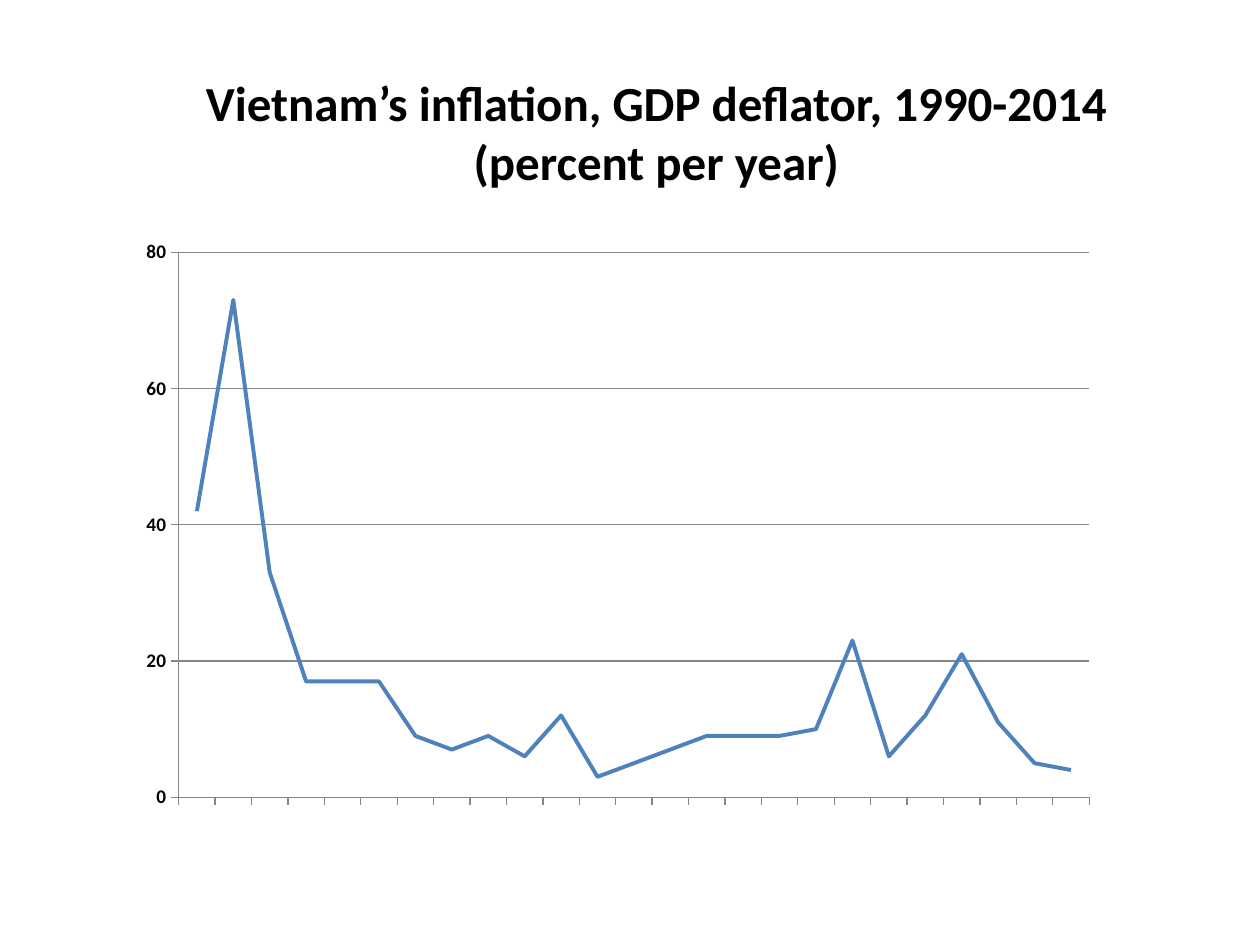
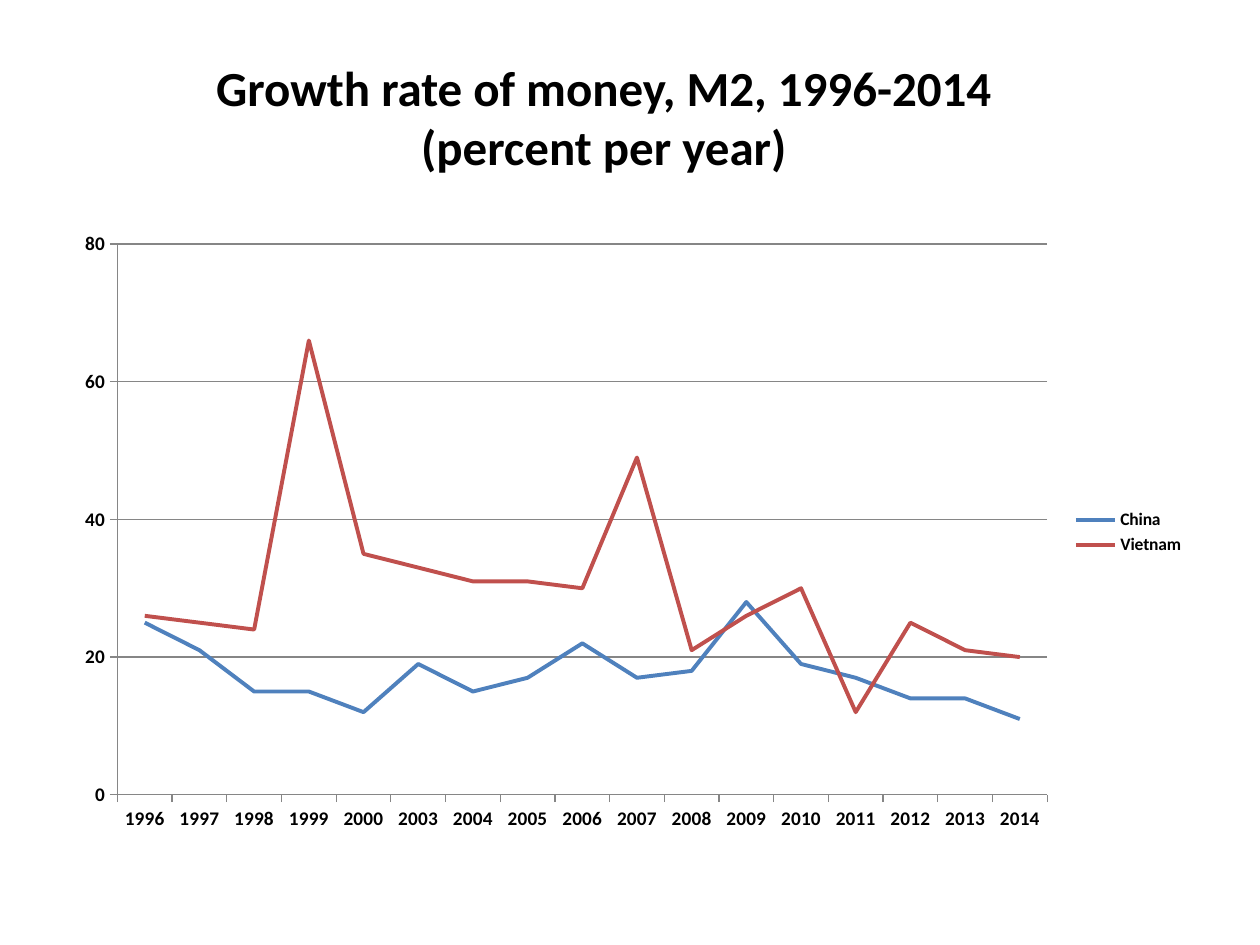
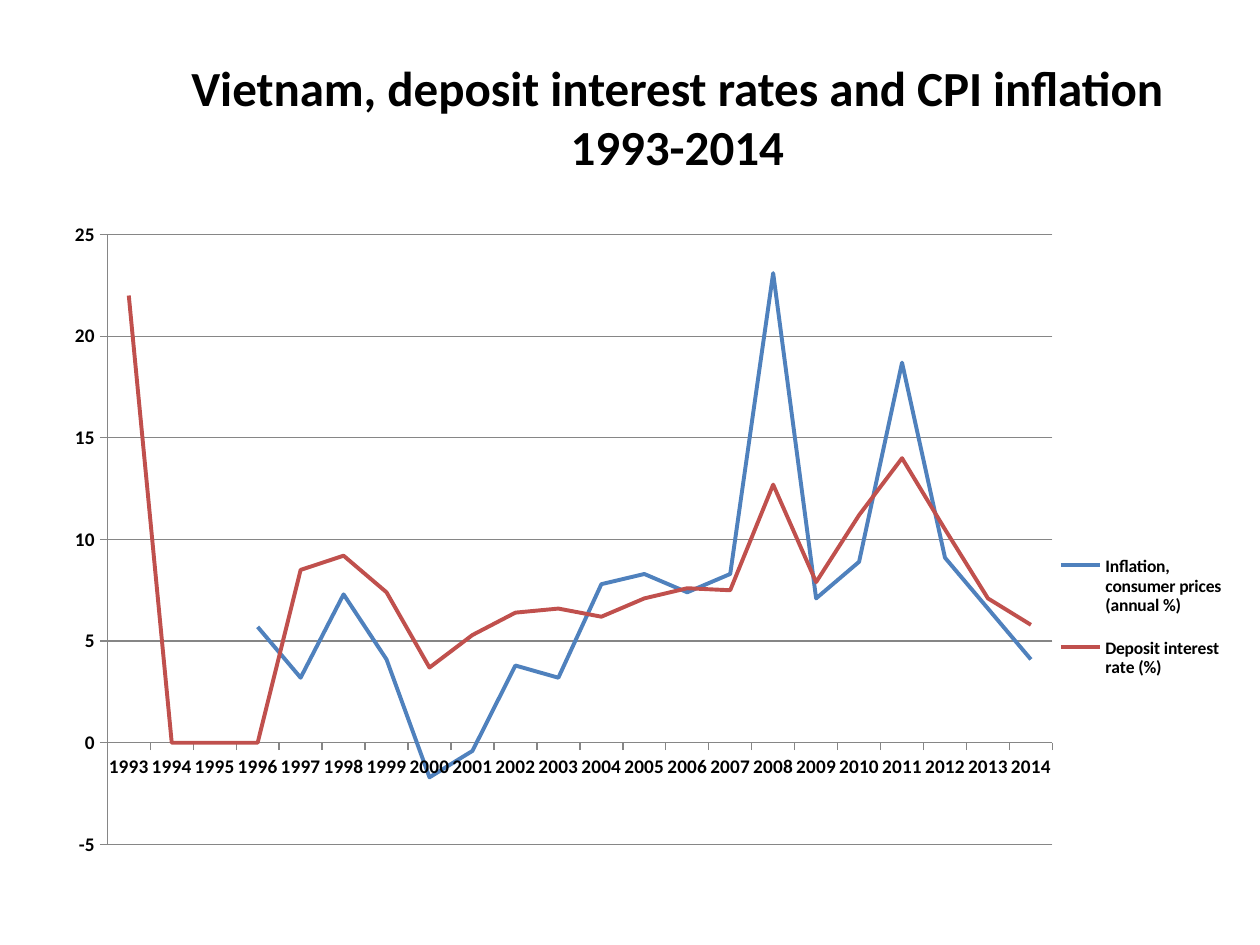
from dataclasses import dataclass

from lxml import etree
from pptx import Presentation
from pptx.chart.data import CategoryChartData
from pptx.dml.color import RGBColor
from pptx.enum.chart import XL_CHART_TYPE, XL_LEGEND_POSITION, XL_TICK_LABEL_POSITION, XL_TICK_MARK
from pptx.enum.text import MSO_ANCHOR, PP_ALIGN
from pptx.oxml.ns import qn
from pptx.util import Pt

LINE = XL_CHART_TYPE.LINE
RIGHT = XL_LEGEND_POSITION.RIGHT
NO_LABELS = XL_TICK_LABEL_POSITION.NONE
OUTSIDE = XL_TICK_MARK.OUTSIDE
NO_TICK = XL_TICK_MARK.NONE
MIDDLE = MSO_ANCHOR.MIDDLE
CENTER = PP_ALIGN.CENTER


@dataclass(frozen=True)
class Theme:
    font: str = "Calibri"
    text: RGBColor = RGBColor(0, 0, 0)
    axis: RGBColor = RGBColor(0x86, 0x86, 0x86)
    series: tuple = (RGBColor(0x4F, 0x81, 0xBD), RGBColor(0xC0, 0x50, 0x4D))
    title_size: Pt = Pt(28)
    axis_size: Pt = Pt(11)
    legend_size: Pt = Pt(10)
    axis_width: Pt = Pt(0.75)
    series_width: Pt = Pt(2.25)


theme = Theme()


def style_font(font, size):
    font.name = theme.font
    font.size = size
    font.bold = True
    font.color.rgb = theme.text


def set_layout(parent, index, box, inner=False):
    """Place a chart part at fractions (x, y, w, h) of the chart area."""
    for old in parent.findall(qn("c:layout")):
        parent.remove(old)
    layout = etree.Element(qn("c:layout"))
    manual = etree.SubElement(layout, qn("c:manualLayout"))
    settings = [("layoutTarget", "inner")] if inner else []
    settings += [("xMode", "edge"), ("yMode", "edge"), *zip("xywh", box)]
    for tag, value in settings:
        etree.SubElement(manual, qn("c:" + tag)).set("val", str(value))
    parent.insert(index, layout)


# Content: boxes in points, plot and legend as fractions of the chart
slides = [
    dict(
        title=["Vietnam’s inflation, GDP deflator, 1990-2014", "(percent per year)"],
        title_box=(96, 30, 558, 90),
        chart_box=(36, 126, 648, 356.4),
        plot=(0.102, 0.051, 0.803, 0.874),
        scale=(0, 80, 20),
        years=range(1990, 2015),
        year_labels=False,
        legend=False,
        series={
            "Series 1": [42, 73, 33, 17, 17, 17, 9, 7, 9, 6, 12, 3, 5, 7, 9, 9, 9,
                         10, 23, 6, 12, 21, 11, 5, 4],
        },
    ),
    dict(
        title=["Growth rate of money, M2, 1996-2014", "(percent per year)"],
        title_box=(90, 21.6, 510, 90),
        chart_box=(36, 126, 648, 356.4),
        plot=(0.048, 0.038, 0.82, 0.883),
        scale=(0, 80, 20),
        years=[*range(1996, 2001), *range(2003, 2015)],
        year_labels=True,
        legend=True,
        series={
            "China": [25, 21, 15, 15, 12, 19, 15, 17, 22, 17, 18, 28, 19, 17, 14, 14, 11],
            "Vietnam": [26, 25, 24, 66, 35, 33, 31, 31, 30, 49, 21, 26, 30, 12, 25, 21, 20],
        },
    ),
    dict(
        title=["Vietnam, deposit interest rates and CPI inflation", "1993-2014"],
        title_box=(90, 21.6, 594, 90),
        chart_box=(36, 126, 666, 365.76),
        plot=(0.038, 0.022, 0.811, 0.953),
        scale=(-5, 25, 5),
        years=range(1993, 2015),
        year_labels=True,
        legend=True,
        legend_box=(0.85, 0.49, 0.15, 0.26),
        series={
            "Inflation, consumer prices (annual %)": [
                None, None, None, 5.7, 3.2, 7.3, 4.1, -1.7, -0.4, 3.8, 3.2, 7.8,
                8.3, 7.4, 8.3, 23.1, 7.1, 8.9, 18.7, 9.1, 6.6, 4.1],
            "Deposit interest rate (%)": [
                22, 0, 0, 0, 8.5, 9.2, 7.4, 3.7, 5.3, 6.4, 6.6, 6.2,
                7.1, 7.6, 7.5, 12.7, 7.9, 11.2, 14, 10.5, 7.1, 5.8],
        },
    ),
]

prs = Presentation()
prs.slide_width, prs.slide_height = Pt(720), Pt(540)

for item in slides:
    s = prs.slides.add_slide(prs.slide_layouts[6])

    # Title
    tf = s.shapes.add_textbox(*map(Pt, item["title_box"])).text_frame
    tf.word_wrap = True
    tf.vertical_anchor = MIDDLE
    p = tf.paragraphs[0]
    p.alignment = CENTER
    for i, line in enumerate(item["title"]):
        if i:
            p.add_line_break()
        r = p.add_run()
        r.text = line
        style_font(r.font, theme.title_size)

    # Chart
    data = CategoryChartData()
    data.categories = [str(year) for year in item["years"]]
    for name, values in item["series"].items():
        data.add_series(name, values)
    chart = s.shapes.add_chart(LINE, *map(Pt, item["chart_box"]), data).chart
    chart.has_title = False
    style_font(chart.font, theme.legend_size)
    set_layout(chart.element.xpath("c:chart/c:plotArea")[0], 0, item["plot"], inner=True)

    # Series lines
    for line, color in zip(chart.plots[0].series, theme.series):
        line.smooth = False
        line.format.line.color.rgb = color
        line.format.line.width = theme.series_width

    # Axes and gridlines
    years, rates = chart.category_axis, chart.value_axis
    rates.minimum_scale, rates.maximum_scale, rates.major_unit = item["scale"]
    rates.has_major_gridlines = True
    for axis in (years, rates):
        axis.major_tick_mark = OUTSIDE
        axis.minor_tick_mark = NO_TICK
        style_font(axis.tick_labels.font, theme.axis_size)
    if not item["year_labels"]:
        years.tick_label_position = NO_LABELS
    for part in (years, rates, rates.major_gridlines):
        part.format.line.color.rgb = theme.axis
        part.format.line.width = theme.axis_width

    # Legend
    chart.has_legend = item["legend"]
    if chart.has_legend:
        chart.legend.position = RIGHT
        chart.legend.include_in_layout = False
        style_font(chart.legend.font, theme.legend_size)
        if "legend_box" in item:
            set_layout(chart.element.xpath("c:chart/c:legend")[0], 1, item["legend_box"])

prs.save("out.pptx")
